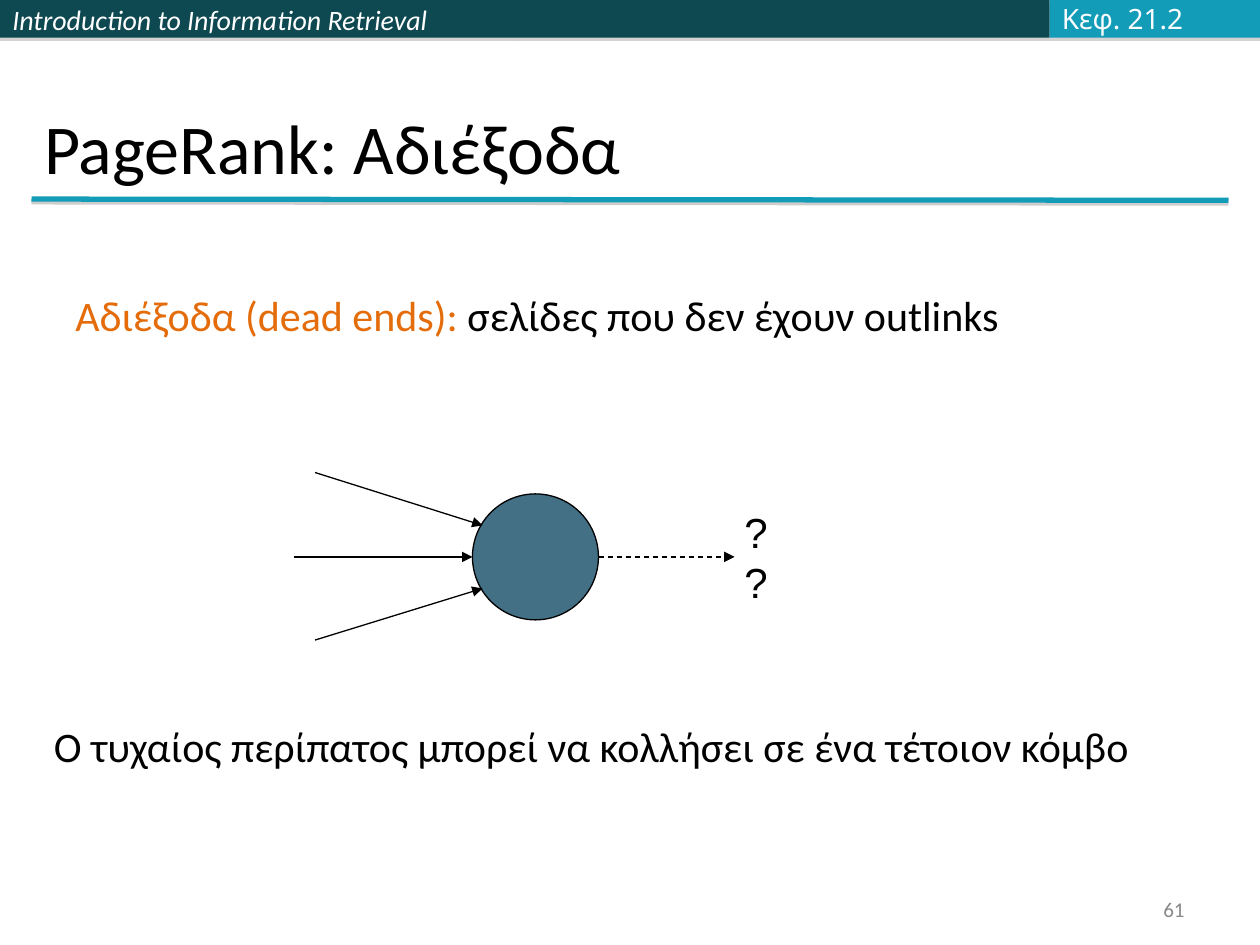
from lxml import etree
from pptx import Presentation
from pptx import util as u
from pptx.dml.color import RGBColor
from pptx.enum import dml, shapes, text
from pptx.oxml.ns import qn

DARK, TEAL, BLACK, WHITE = "0E4851", "139CB7", "000000", "FFFFFF"
ORANGE, NODE, GREY = "E46C0A", "437085", "898989"
LEFT, CENTER, RIGHT = (text.PP_ALIGN.LEFT, text.PP_ALIGN.CENTER,
                       text.PP_ALIGN.RIGHT)
TOP, MIDDLE, BOTTOM = (text.MSO_ANCHOR.TOP, text.MSO_ANCHOR.MIDDLE,
                       text.MSO_ANCHOR.BOTTOM)


def color(value):
    return RGBColor.from_string(value)


class SlideBuilder:
    font = "Calibri"

    def __init__(self, prs):
        self.s = prs.slides.add_slide(prs.slide_layouts[5])

    def box(self, *at):
        return [u.Inches(v) for v in at]

    def set_text(self, sp, runs, size, align=LEFT, anchor=TOP, font=None,
                 italic=False, wrap=True):
        """Fill a shape with one paragraph of (text, colour) runs."""
        tf = sp.text_frame
        tf.word_wrap = wrap
        tf.auto_size = text.MSO_AUTO_SIZE.NONE
        tf.vertical_anchor = anchor
        p = tf.paragraphs[0]
        p.alignment = align
        for words, fill in runs:
            r = p.add_run()
            r.text = words
            r.font.name = font or self.font
            r.font.size = u.Pt(size)
            r.font.italic = italic
            r.font.color.rgb = color(fill)

    def title(self, at, words):
        sp = self.s.shapes.title
        sp.left, sp.top, sp.width, sp.height = self.box(*at)
        self.set_text(sp, [(words, BLACK)], 40, anchor=BOTTOM)

    def label(self, at, runs, size, **style):
        sp = self.s.shapes.add_textbox(*self.box(*at))
        self.set_text(sp, runs, size, **style)

    def shape(self, kind, at, fill, line=None):
        sp = self.s.shapes.add_shape(kind, *self.box(*at))
        sp.shadow.inherit = False
        sp.fill.solid()
        sp.fill.fore_color.rgb = color(fill)
        if line:
            sp.line.color.rgb = color(line)
            sp.line.width = u.Pt(0.75)
        else:
            sp.line.fill.background()
        return sp

    def line(self, start, end, stroke=BLACK, width=0.75, arrow=True,
             dashed=False):
        c = self.s.shapes.add_connector(shapes.MSO_CONNECTOR.STRAIGHT,
                                        *self.box(*start, *end))
        c.line.color.rgb = color(stroke)
        c.line.width = u.Pt(width)
        if dashed:
            c.line.dash_style = dml.MSO_LINE.DASH
        if arrow:
            ln = c._element.spPr.find(qn("a:ln"))
            etree.SubElement(ln, qn("a:tailEnd"), type="triangle")
        etree.SubElement(c._element.spPr, qn("a:effectLst"))
        return c

    def drop_shadow(self, sp, distance, opacity):
        """Cast a sharp grey shadow straight down."""
        effects = sp._element.spPr.find(qn("a:effectLst"))
        shadow = etree.SubElement(effects, qn("a:outerShdw"), blurRad="0",
                                  dist=str(u.Pt(distance)), dir="5400000",
                                  rotWithShape="0")
        tint = etree.SubElement(shadow, qn("a:srgbClr"), val="808080")
        etree.SubElement(tint, qn("a:alpha"), val=str(opacity * 1000))


def main():
    prs = Presentation()
    prs.slide_width, prs.slide_height = u.Inches(10), u.Inches(7.5)
    b = SlideBuilder(prs)

    # Header band
    bars = []
    for left, width, fill in ((0, 4.08, DARK), (4.08, 4.25, DARK),
                              (8.33, 1.67, TEAL)):
        bar = b.shape(shapes.MSO_SHAPE.RECTANGLE, (left, 0, width, 0.3), fill)
        b.drop_shadow(bar, 1.8, 35)
        bars.append(bar)
    b.set_text(bars[0], [("Introduction to Information Retrieval", WHITE)], 16,
               anchor=MIDDLE, italic=True)
    b.label((8.33, -0.04, 1.24, 0.37), [("Κεφ. 21.2", "FBFCFF")], 16,
            anchor=MIDDLE, font="Noto Sans", wrap=False)

    # Title and rule
    b.title((0.25, 0.18, 9.5, 1.37), "PageRank: Αδιέξοδα")
    rule = b.line((0.25, 1.58), (9.75, 1.59), TEAL, 3, arrow=False)
    b.drop_shadow(rule, 1.6, 38)

    # Definition and conclusion
    b.label((0.5, 2.25, 8.45, 0.5),
            [("Αδιέξοδα (dead ends): ", ORANGE),
             ("σελίδες που δεν έχουν outlinks", BLACK)], 24)
    b.label((0.33, 5.67, 9, 0.5),
            [("Ο τυχαίος περίπατος μπορεί να κολλήσει σε ένα τέτοιον κόμβο",
              BLACK)], 24)

    # Dead-end node with its links in and the missing link out
    mid = 4.42
    b.shape(shapes.MSO_SHAPE.OVAL, (3.75, mid - 0.5, 1, 1), NODE, BLACK)
    for start, end in (((2.5, 5.08), (3.83, 4.67)),
                       ((2.5, 3.75), (3.83, 4.17)),
                       ((2.33, mid), (3.75, mid))):
        b.line(start, end)
    b.line((4.75, mid), (5.83, mid), dashed=True)
    b.label((5.75, mid - 0.25, 0.5, 0.5), [("??", BLACK)], 24, align=CENTER,
            anchor=MIDDLE, font="Arial")

    # Page number
    b.label((7.17, 7.08, 2.33, 0.27), [("61", GREY)], 12, align=RIGHT,
            anchor=MIDDLE)

    prs.save("out.pptx")


if __name__ == "__main__":
    main()
